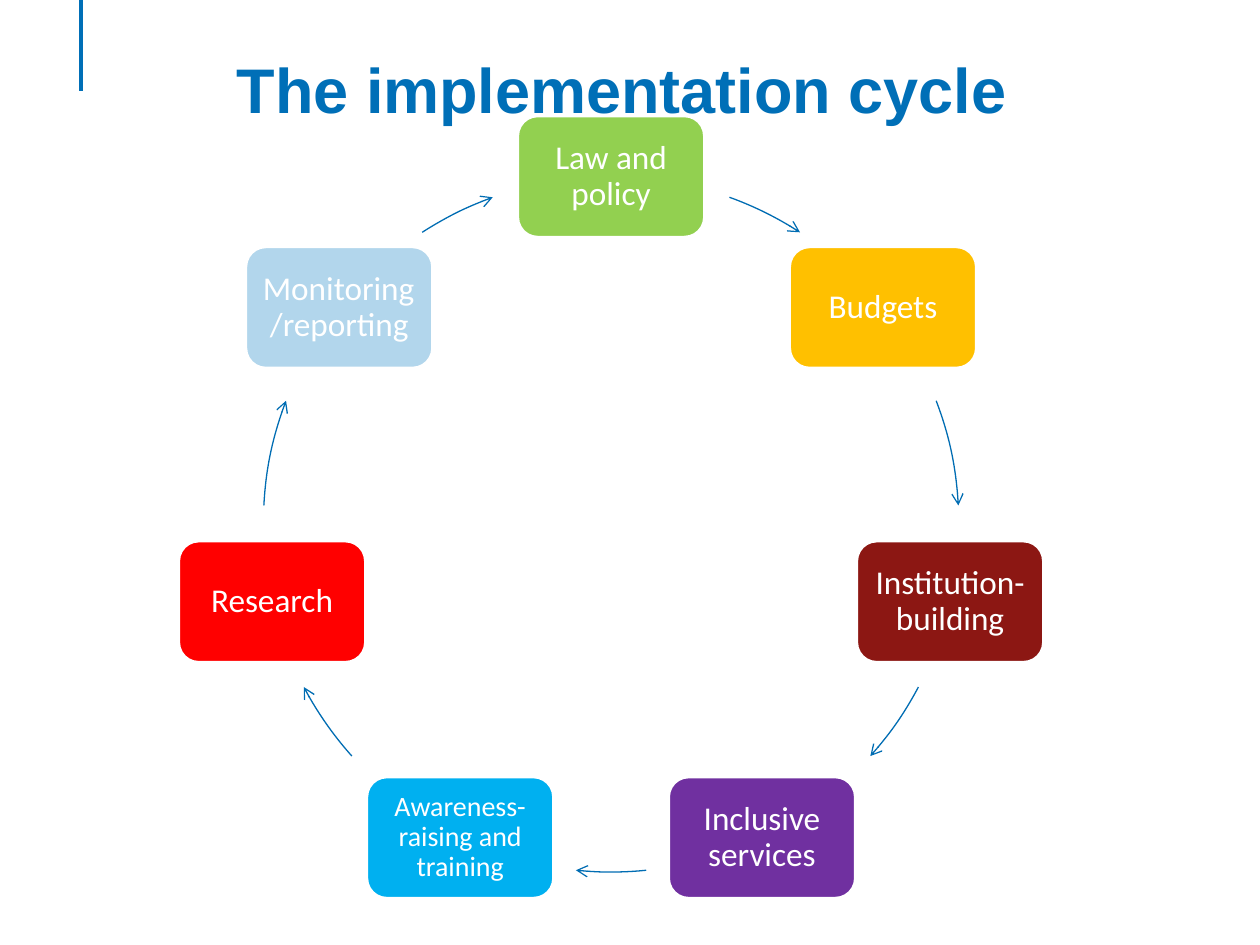
from math import cos, radians, sin

from lxml.etree import SubElement
from pptx import Presentation
from pptx.dml.color import RGBColor
from pptx.enum.shapes import MSO_CONNECTOR as CONN, MSO_SHAPE as SHAPE
from pptx.enum.text import MSO_ANCHOR as ANCHOR, PP_ALIGN as ALIGN
from pptx.oxml.ns import qn
from pptx.util import Cm, Pt

CENTER_X, CENTER_Y, RADIUS = 12.32, 10.57, 7.01
BOX_W, BOX_H = 3.78, 2.46

STEPS = [
    ("Law and policy", "92D050", 19, 0.21),
    ("Budgets", "FFC000", 19, 0.21),
    ("Institution-building", "8C1713", 19, 0.21),
    ("Inclusive services", "7030A0", 19, 0.21),
    ("Awareness-raising and training", "00B0F0", 16, 0.16),
    ("Research", "FF0000", 19, 0.21),
    ("Monitoring/reporting", "B2D6EC", 19, 0.21),
]
RIGHT_ARCS = [(289.9, 302.9), (339.2, 356.9), (27.9, 41.8)]
BOTTOM_ARC = (84.2, 95.8)


def paint(color_format, value):
    color_format.rgb = RGBColor.from_string(value)


def add_text(p, text, font, size, color, bold=False):
    p.alignment = ALIGN.CENTER
    r = p.add_run()
    r.text = text
    r.font.name = font
    r.font.size = Pt(size)
    r.font.bold = bold
    paint(r.font.color, color)


def set_line(s, color, width):
    paint(s.line.color, color)
    s.line.width = Pt(width)


def add_title(slide, text):
    s = slide.shapes.title
    s.left, s.top, s.width, s.height = Cm(0.76), Cm(0.76), Cm(23.55), Cm(3.02)
    tf = s.text_frame
    tf.vertical_anchor = ANCHOR.TOP
    tf.margin_top = Cm(0.25)
    add_text(tf.paragraphs[0], text, "Arial", 36, "006FB7", True)


def add_rule(slide):
    s = slide.shapes.add_connector(CONN.STRAIGHT, Cm(1.63), 0, Cm(1.63), Cm(1.83))
    set_line(s, "006FB7", 2)
    SubElement(s.element.spPr, qn("a:effectLst"))


def add_step(slide, angle, text, color, size, margin):
    x = CENTER_X + RADIUS * sin(radians(angle)) - BOX_W / 2
    y = CENTER_Y - RADIUS * cos(radians(angle)) - BOX_H / 2
    s = slide.shapes.add_shape(SHAPE.ROUNDED_RECTANGLE, Cm(x), Cm(y), Cm(BOX_W), Cm(BOX_H))
    s.shadow.inherit = False
    s.fill.solid()
    paint(s.fill.fore_color, color)
    set_line(s, "FFFFFF", 2)
    tf = s.text_frame
    tf.word_wrap = True
    tf.vertical_anchor = ANCHOR.MIDDLE
    tf.margin_left = tf.margin_right = tf.margin_top = tf.margin_bottom = Cm(margin)
    p = tf.paragraphs[0]
    p.line_spacing = 0.9
    add_text(p, text, "Calibri", size, "FFFFFF")


def add_arc(slide, start, end):
    s = slide.shapes.add_shape(SHAPE.ARC, Cm(CENTER_X - RADIUS), Cm(CENTER_Y - RADIUS),
                               Cm(2 * RADIUS), Cm(2 * RADIUS))
    s.shadow.inherit = False
    s.fill.background()
    s.adjustments[0] = start * 0.6
    s.adjustments[1] = end * 0.6
    set_line(s, "006DB3", 0.75)
    SubElement(s.element.spPr.find(qn("a:ln")), qn("a:tailEnd"), type="arrow")


def main():
    prs = Presentation()
    prs.slide_width, prs.slide_height = Cm(25.4), Cm(19.05)
    slide = prs.slides.add_slide(prs.slide_layouts[5])
    add_rule(slide)
    add_title(slide, "The implementation cycle")
    left_arcs = [((180 - end) % 360, (180 - start) % 360) for start, end in reversed(RIGHT_ARCS)]
    arcs = RIGHT_ARCS + [BOTTOM_ARC] + left_arcs
    for i, (step, arc) in enumerate(zip(STEPS, arcs)):
        add_step(slide, 360 / len(STEPS) * i, *step)
        add_arc(slide, *arc)
    prs.save("out.pptx")


if __name__ == "__main__":
    main()
